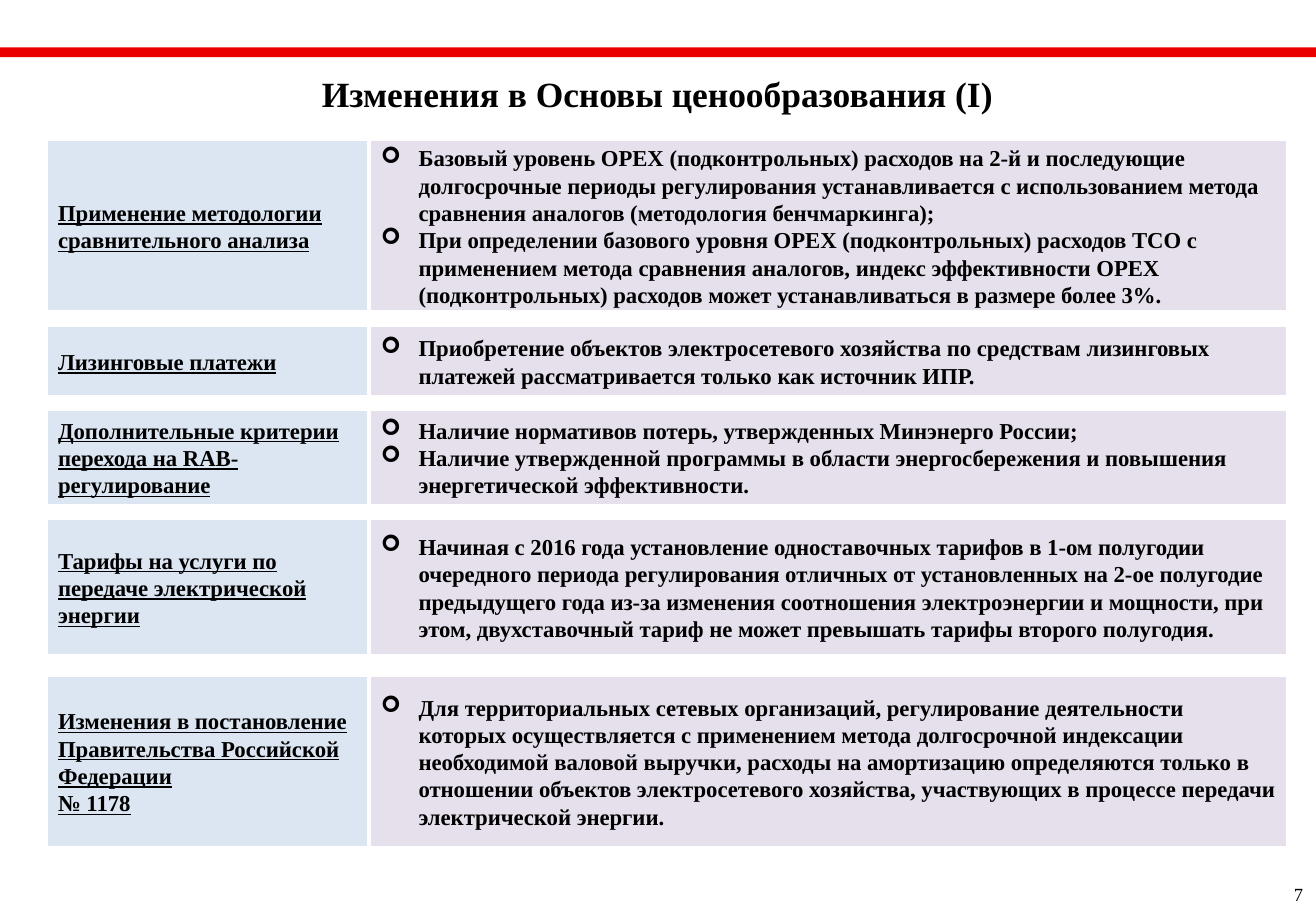
import pptx
import pptx.util
import pptx.dml.color
import pptx.enum.shapes
import pptx.enum.text
import pptx.oxml
import pptx.oxml.ns
from dataclasses import dataclass

Inches = pptx.util.Inches
Color = pptx.dml.color.RGBColor.from_string
Align = pptx.enum.text.PP_ALIGN
Anchor = pptx.enum.text.MSO_ANCHOR


@dataclass
class Theme:
    font: str = "Times New Roman"
    ink: str = "000000"
    stripe: str = "EB0000"
    topic: str = "DCE6F2"
    detail: str = "E6E0EC"
    border: str = "FFFFFF"
    title_size: float = 21
    text_size: float = 13.5
    number_size: float = 11


theme = Theme()


def write(box, lines, size, align=Align.LEFT, bold=True, underline=False, bullet=None):
    frame = box.text_frame
    for index, line in enumerate(lines):
        para = frame.paragraphs[0] if index == 0 else frame.add_paragraph()
        para.text = line
        para.alignment = align
        if bullet:
            properties = para._p.get_or_add_pPr()
            properties.set("marL", str(Inches(0.31)))
            properties.set("indent", str(-Inches(0.31)))
            for tag, key, value in (("a:buFont", "typeface", "Wingdings"), ("a:buChar", "char", bullet)):
                element = pptx.oxml.ns.qn(tag)
                mark = properties.makeelement(element, {key: value})
                properties.append(mark)
        for span in para.runs:
            span.font.name = theme.font
            span.font.size = pptx.util.Pt(size)
            span.font.bold = bold
            span.font.underline = underline
            span.font.color.rgb = Color(theme.ink)


def add_panel(page, left, top, width, height, fill):
    panel = page.shapes.add_shape(
        pptx.enum.shapes.MSO_SHAPE.RECTANGLE, Inches(left), Inches(top), Inches(width), Inches(height)
    )
    panel.shadow.inherit = False
    panel.fill.solid()
    panel.fill.fore_color.rgb = Color(fill)
    panel.line.fill.background()
    panel.text_frame.word_wrap = True
    panel.text_frame.vertical_anchor = Anchor.MIDDLE
    return panel


deck = pptx.Presentation()
deck.slide_width = Inches(10.84)
deck.slide_height = Inches(7.5)
page = deck.slides.add_slide(deck.slide_layouts.get_by_name("Title Only"))

add_panel(page, 0, 0.39, 10.84, 0.08, theme.stripe)

title = page.shapes.title
title.left, title.top = Inches(1.4), Inches(0.54)
title.width, title.height = Inches(8.03), Inches(0.46)
title.text_frame.auto_size = pptx.enum.text.MSO_AUTO_SIZE.NONE
title.text_frame.vertical_anchor = Anchor.TOP
write(title, ["Изменения в Основы ценообразования (I)"], theme.title_size, Align.CENTER)

sections = [
    (1.15, 1.42, ["Применение методологии сравнительного анализа"], [
        "Базовый уровень ОРЕХ (подконтрольных) расходов на 2-й и последующие долгосрочные периоды "
        "регулирования устанавливается с использованием метода сравнения аналогов (методология бенчмаркинга);",
        "При определении базового уровня ОРЕХ (подконтрольных) расходов ТСО с применением метода сравнения "
        "аналогов, индекс эффективности ОРЕХ (подконтрольных) расходов может устанавливаться в размере более 3%.",
    ]),
    (2.68, 0.59, ["Лизинговые платежи"], [
        "Приобретение объектов электросетевого хозяйства по средствам лизинговых платежей "
        "рассматривается только как источник ИПР.",
    ]),
    (3.37, 0.79, ["Дополнительные критерии перехода на RAB-регулирование"], [
        "Наличие нормативов потерь, утвержденных Минэнерго России;",
        "Наличие утвержденной программы в области энергосбережения и повышения энергетической эффективности.",
    ]),
    (4.27, 1.13, ["Тарифы на услуги по передаче электрической энергии"], [
        "Начиная с 2016 года установление одноставочных тарифов в 1-ом полугодии очередного периода "
        "регулирования отличных от установленных на 2-ое полугодие предыдущего года из-за изменения "
        "соотношения электроэнергии и мощности, при этом, двухставочный тариф не может превышать "
        "тарифы второго полугодия.",
    ]),
    (5.56, 1.42, ["Изменения в постановление Правительства Российской Федерации", "№ 1178"], [
        "Для территориальных сетевых организаций, регулирование деятельности которых осуществляется "
        "с применением метода долгосрочной индексации необходимой валовой выручки, расходы на амортизацию "
        "определяются только в отношении объектов электросетевого хозяйства, участвующих в процессе передачи "
        "электрической энергии.",
    ]),
]

for top, height, topic_lines, detail_lines in sections:
    topic = add_panel(page, 0.38, top, 2.69, height, theme.topic)
    detail = add_panel(page, 3.04, top, 7.57, height, theme.detail)
    for panel in (topic, detail):
        panel.line.color.rgb = Color(theme.border)
        panel.line.width = pptx.util.Pt(2)
    write(topic, topic_lines, theme.text_size, underline=True)
    write(detail, detail_lines, theme.text_size, bullet="➢")

number = page.shapes.add_textbox(Inches(10.56), Inches(7.22), Inches(0.28), Inches(0.29))
number.text_frame.word_wrap = False
write(number, ["7"], theme.number_size, bold=False)

deck.save("out.pptx")
